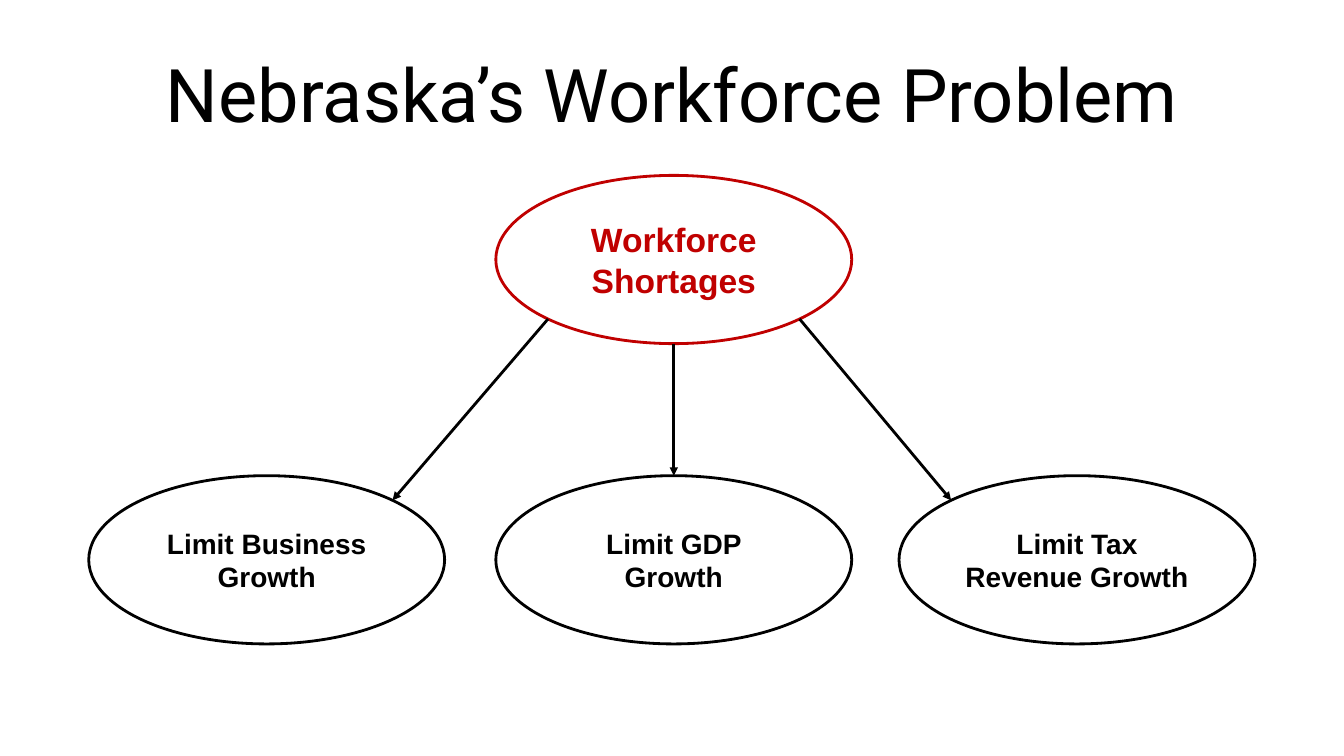
from math import sqrt

from lxml.etree import SubElement
from pptx import Presentation
from pptx.dml.color import RGBColor
from pptx.enum.shapes import MSO_CONNECTOR as CXN, MSO_SHAPE as SHAPE
from pptx.enum.text import MSO_ANCHOR as ANCHOR, PP_ALIGN as ALIGN
from pptx.oxml.ns import qn
from pptx.util import Pt

COLORS = {"black": "000000", "white": "FFFFFF", "red": "C00000"}
OVAL_W, OVAL_H = 254.2, 120.2
CAUSE_Y, EFFECT_Y = 125.3, 339.8
CENTER_X = 354.2
EFFECTS = [
    ("Limit Business Growth", 63.4, -1),
    ("Limit GDP Growth", CENTER_X, 0),
    ("Limit Tax Revenue Growth", 642.2, 1),
]


def rgb(name):
    """Return the named colour."""
    return RGBColor.from_string(COLORS[name])


def rim_point(left, top, side, down):
    """Return the point on an oval's rim toward a side (-1, 0, 1), below or above."""
    k = sqrt(0.5) if side else 1
    return left + (1 + side * k) * OVAL_W / 2, top + (1 + down * k) * OVAL_H / 2


class Diagram:
    """Draws styled elements on one slide."""

    def __init__(self, slide, font="Arial", title_font="Roboto", line=2):
        self.s = slide
        self.font, self.title_font, self.line = font, title_font, line

    def label(self, sp, text, font, size, color, bold):
        """Put centred, formatted text in a shape."""
        tf = sp.text_frame
        tf.text = text
        tf.word_wrap = True
        tf.vertical_anchor = ANCHOR.MIDDLE
        p = tf.paragraphs[0]
        p.alignment = ALIGN.CENTER
        f = p.runs[0].font
        f.name, f.size, f.bold = font, Pt(size), bold
        f.color.rgb = rgb(color)

    def title(self, text):
        """Place and fill the title placeholder."""
        sp = self.s.shapes.title
        sp.left, sp.top, sp.width, sp.height = Pt(48), Pt(21.6), Pt(864), Pt(90)
        self.label(sp, text, self.title_font, 52.8, "black", False)

    def oval(self, text, left, top, size=20, color="black"):
        """Add an outlined oval with a bold label."""
        sp = self.s.shapes.add_shape(
            SHAPE.OVAL, Pt(left), Pt(top), Pt(OVAL_W), Pt(OVAL_H))
        sp.shadow.inherit = False
        sp.fill.solid()
        sp.fill.fore_color.rgb = rgb("white")
        sp.line.color.rgb = rgb(color)
        sp.line.width = Pt(self.line)
        self.label(sp, text, self.font, size, color, True)

    def arrow(self, start, end):
        """Add a straight arrow between two points."""
        c = self.s.shapes.add_connector(
            CXN.STRAIGHT, *(Pt(v) for v in (*start, *end)))
        c.line.color.rgb = rgb("black")
        c.line.width = Pt(self.line)
        sp_pr = c.element.spPr
        SubElement(sp_pr.find(qn("a:ln")), qn("a:tailEnd"), type="triangle")
        SubElement(sp_pr, qn("a:effectLst"))


def main():
    """Build and save the slide."""
    prs = Presentation()
    prs.slide_width, prs.slide_height = Pt(960), Pt(540)
    d = Diagram(prs.slides.add_slide(prs.slide_layouts[5]))
    d.title("Nebraska’s Workforce Problem")
    d.oval("Workforce Shortages", CENTER_X, CAUSE_Y, 24, "red")
    for text, left, side in EFFECTS:
        d.oval(text, left, EFFECT_Y)
        d.arrow(rim_point(CENTER_X, CAUSE_Y, side, 1),
                rim_point(left, EFFECT_Y, -side, -1))
    prs.save("out.pptx")


if __name__ == "__main__":
    main()
